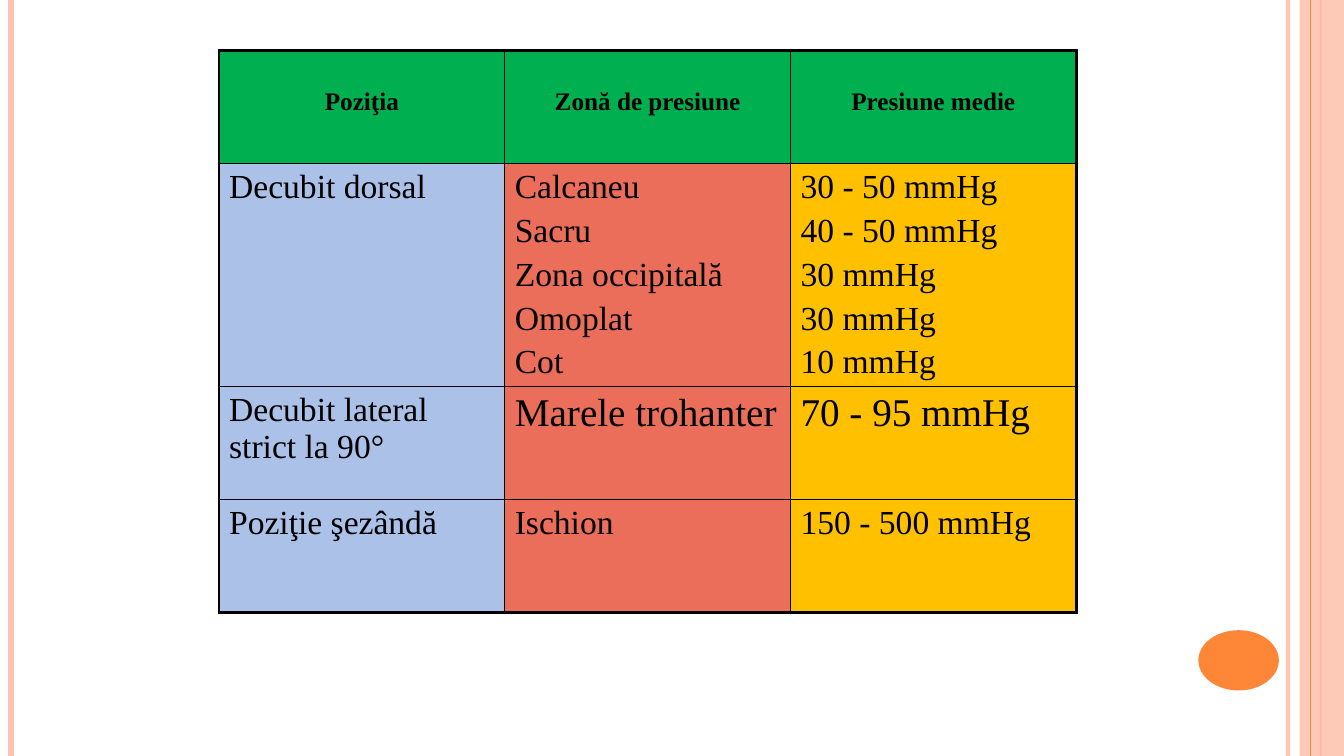
import pptx
import pptx.util
import pptx.dml.color
import pptx.enum.shapes
import pptx.enum.text
import pptx.oxml
import pptx.oxml.ns
from pptx.util import Cm, Pt

WIDE, HIGH = 33.87, 19.05
PEACH, ORANGE, BLACK = "FEC3AE", "FE8637", "000000"
FILLS = ["ACC1E8", "EB6E5A", "FFC000"]
HEADS = ["Poziţia", "Zonă de presiune", "Presiune medie"]
# Each cell is a list of paragraphs.
ROWS = [
    [["Decubit dorsal"],
     ["Calcaneu", "Sacru", "Zona occipitală", "Omoplat", "Cot"],
     ["30 - 50 mmHg", "40 - 50 mmHg", "30 mmHg", "30 mmHg", "10 mmHg"]],
    [["Decubit lateral strict la 90°"], ["Marele trohanter"], ["70 - 95 mmHg"]],
    [["Poziţie şezândă"], ["Ischion"], ["150 - 500 mmHg"]],
]
LARGE = {(2, 1), (2, 2)}
COL = 7.2
TALL = [2.84, 5.62, 2.85, 2.85]


def paint(fill, color):
    fill.solid()
    fill.fore_color.rgb = pptx.dml.color.RGBColor.from_string(color)


def fade(item, percent):
    """Make the first solid colour of a shape partly transparent."""
    tone = next(item._element.spPr.iter(pptx.oxml.ns.qn("a:srgbClr")))
    alpha = tone.makeelement(pptx.oxml.ns.qn("a:alpha"), {"val": str(percent * 1000)})
    tone.append(alpha)


def add_stripe(slide, left, color, width):
    line = slide.shapes.add_connector(
        pptx.enum.shapes.MSO_CONNECTOR.STRAIGHT, Cm(left), Cm(0), Cm(left), Cm(HIGH))
    paint(line.line.fill, color)
    line.line.width = Pt(width)
    props = line._element.spPr
    props.append(props.makeelement(pptx.oxml.ns.qn("a:effectLst"), {}))
    return line


def add_block(slide, kind, left, top, width, height, color):
    block = slide.shapes.add_shape(kind, Cm(left), Cm(top), Cm(width), Cm(height))
    block.shadow.inherit = False
    paint(block.fill, color)
    block.line.fill.background()
    return block


def set_edges(cell, widths):
    """Draw the left, right, top and bottom borders, in that order."""
    props = cell._tc.get_or_add_tcPr()
    for side, width in zip("LRTB", widths):
        props.append(pptx.oxml.parse_xml(
            f'<a:ln{side} {pptx.oxml.ns.nsdecls("a")} w="{Pt(width)}">'
            f'<a:solidFill><a:srgbClr val="{BLACK}"/></a:solidFill></a:ln{side}>'))


def write(cell, lines, size, bold=False, align=None):
    frame = cell.text_frame
    for i, line in enumerate(lines):
        para = frame.add_paragraph() if i else frame.paragraphs[0]
        para.alignment = align
        if i:
            para.space_before = Pt(size * 0.2)
        run = para.add_run()
        run.text = line
        run.font.name = "Times New Roman"
        run.font.size = Pt(size)
        run.font.bold = bold
        paint(run.font.fill, BLACK)


def add_grid(slide):
    rows, cols = len(TALL), len(HEADS)
    grid = slide.shapes.add_table(
        rows, cols, Cm(5.52), Cm(1.28), Cm(COL * cols), Cm(sum(TALL))).table
    for col in grid.columns:
        col.width = Cm(COL)
    for r, height in enumerate(TALL):
        grid.rows[r].height = Cm(height)
        for c in range(cols):
            cell = grid.cell(r, c)
            outer = [c == 0, c == cols - 1, r == 0, r == rows - 1]
            set_edges(cell, [2.25 if edge else 1 for edge in outer])
            if r == 0:
                paint(cell.fill, "00B050")
                cell.margin_top = Cm(0.93)
                write(cell, [HEADS[c]], 18, True, pptx.enum.text.PP_ALIGN.CENTER)
            else:
                paint(cell.fill, FILLS[c])
                write(cell, ROWS[r - 1][c], 28 if (r, c) in LARGE else 24)


def main():
    deck = pptx.Presentation()
    deck.slide_width, deck.slide_height = Cm(WIDE), Cm(HIGH)
    slide = deck.slides.add_slide(deck.slide_layouts[6])
    shapes = pptx.enum.shapes.MSO_SHAPE

    fade(add_stripe(slide, 32.46, PEACH, 3), 93)
    add_stripe(slide, 0.28, PEACH, 4.5)
    add_stripe(slide, 33.3, ORANGE, 1.5)
    band = add_block(slide, shapes.RECTANGLE, 32.75, 0, 1.12, HIGH, PEACH)
    fade(band, 87)
    add_stripe(slide, 33.02, ORANGE, 0.75)
    add_block(slide, shapes.OVAL, 30.2, 15.88, 2.03, 1.52, ORANGE)
    add_grid(slide)
    deck.save("out.pptx")


if __name__ == "__main__":
    main()
